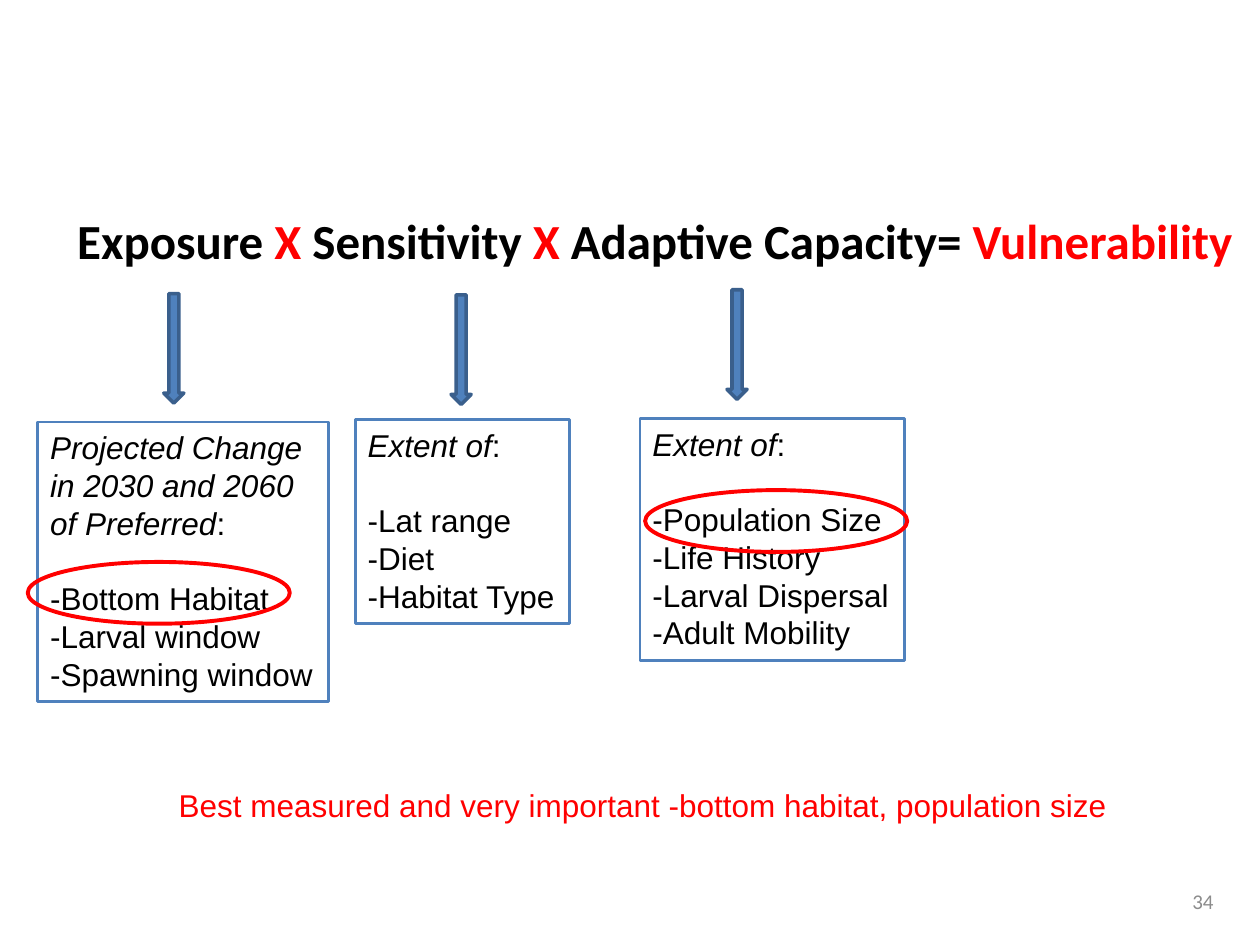
import pptx
import pptx.util
import pptx.dml.color
import pptx.enum.shapes
import pptx.enum.text

Inches, Pt = pptx.util.Inches, pptx.util.Pt
SHAPE = pptx.enum.shapes.MSO_SHAPE
ALIGN = pptx.enum.text.PP_ALIGN
ANCHOR = pptx.enum.text.MSO_ANCHOR
FIT = pptx.enum.text.MSO_AUTO_SIZE

THEME = {
    "black": "000000", "red": "FF0000", "blue": "4F81BD",
    "dark_blue": "3A5F8C", "grey": "8C8C8C",
    "head_font": "Calibri", "body_font": "Arial",
    "head_size": 28, "body_size": 18, "number_size": 12,
    "list_gap": 21.5,
}

EQUATION = [("Exposure", "black"), (" X ", "red"), ("Sensitivity", "black"),
            (" X ", "red"), ("Adaptive Capacity= ", "black"),
            ("Vulnerability ", "red")]

FACTORS = [
    {"arrow": (1.3, 2.33), "box": (0.3, 3.35, 2.31, 2.22),
     "heading": ["Projected Change", "in 2030 and 2060", "of Preferred"],
     "items": ["-Bottom Habitat", "-Larval window", "-Spawning window"]},
    {"arrow": (3.58, 2.34), "box": (2.82, 3.33, 1.7, 1.62),
     "heading": ["Extent of"],
     "items": ["-Lat range", "-Diet", "-Habitat Type"]},
    {"arrow": (5.77, 2.3), "box": (5.08, 3.32, 2.1, 1.92),
     "heading": ["Extent of"],
     "items": ["-Population Size", "-Life History", "-Larval Dispersal",
               "-Adult Mobility"]},
]
ARROW_SIZE = (0.16, 0.87)
RINGS = [(0.22, 4.46), (5.12, 3.89)]
RING_SIZE = (2.08, 0.49)
CONCLUSION = "Best measured and very important -bottom habitat, population size"
SLIDE_NUMBER = "34"


def color(name):
    return pptx.dml.color.RGBColor.from_string(THEME[name])


def add_shape(slide, kind, box, line, width, fill=None):
    sp = slide.shapes.add_shape(kind, *map(Inches, box))
    sp.shadow.inherit = False
    if fill:
        sp.fill.solid()
        sp.fill.fore_color.rgb = color(fill)
    else:
        sp.fill.background()
    sp.line.color.rgb = color(line)
    sp.line.width = Pt(width)
    return sp


def set_font(p, role, name="black"):
    """Style a paragraph with the theme's font and size for a role."""
    family = "body_font" if role == "body" else "head_font"
    p.font.name = THEME[family]
    p.font.size = Pt(THEME[role + "_size"])
    p.font.color.rgb = color(name)


def add_text(slide, box, runs, role, align, wrap=True):
    """Add a one-paragraph text box from (text, colour name) runs."""
    tf = slide.shapes.add_textbox(*map(Inches, box)).text_frame
    tf.word_wrap = wrap
    p = tf.paragraphs[0]
    p.alignment = align
    set_font(p, role, runs[0][1])
    for text, name in runs:
        r = p.add_run()
        r.text = text
        r.font.color.rgb = color(name)
    return tf


def add_factor_box(slide, factor):
    """Add an outlined box: italic heading, a gap, then the items."""
    sp = add_shape(slide, SHAPE.RECTANGLE, factor["box"], "blue", 1.5)
    tf = sp.text_frame
    tf.word_wrap = False
    tf.auto_size = FIT.SHAPE_TO_FIT_TEXT
    tf.vertical_anchor = ANCHOR.TOP
    heading, items = factor["heading"], factor["items"]
    for i, text in enumerate(heading + items):
        p = tf.paragraphs[0] if i == 0 else tf.add_paragraph()
        p.alignment = ALIGN.LEFT
        set_font(p, "body")
        r = p.add_run()
        r.text = text
        if i < len(heading):
            r.font.italic = True
        if i == len(heading) - 1:
            p.add_run().text = ":"
        if i == len(heading):
            p.space_before = Pt(THEME["list_gap"])


def main():
    prs = pptx.Presentation()
    prs.slide_width, prs.slide_height = Inches(10), Inches(7.5)
    s = prs.slides.add_slide(prs.slide_layouts[6])

    tf = add_text(s, (7.4, 6.95, 2.33, 0.4), [(SLIDE_NUMBER, "grey")],
                  "number", ALIGN.RIGHT)
    tf.vertical_anchor = ANCHOR.MIDDLE
    tf = add_text(s, (0.49, 1.62, 9.5, 0.86), EQUATION, "head", ALIGN.CENTER)
    tf.paragraphs[0].font.bold = True

    for factor in FACTORS:
        add_shape(s, SHAPE.DOWN_ARROW, factor["arrow"] + ARROW_SIZE,
                  "dark_blue", 2, "blue")
        add_factor_box(s, factor)
    for corner in RINGS:
        add_shape(s, SHAPE.OVAL, corner + RING_SIZE, "red", 2.25)

    tf = add_text(s, (1.32, 6.19, 7.64, 0.4), [(CONCLUSION, "red")],
                  "body", ALIGN.LEFT, wrap=False)
    tf.auto_size = FIT.SHAPE_TO_FIT_TEXT
    prs.save("out.pptx")


if __name__ == "__main__":
    main()
